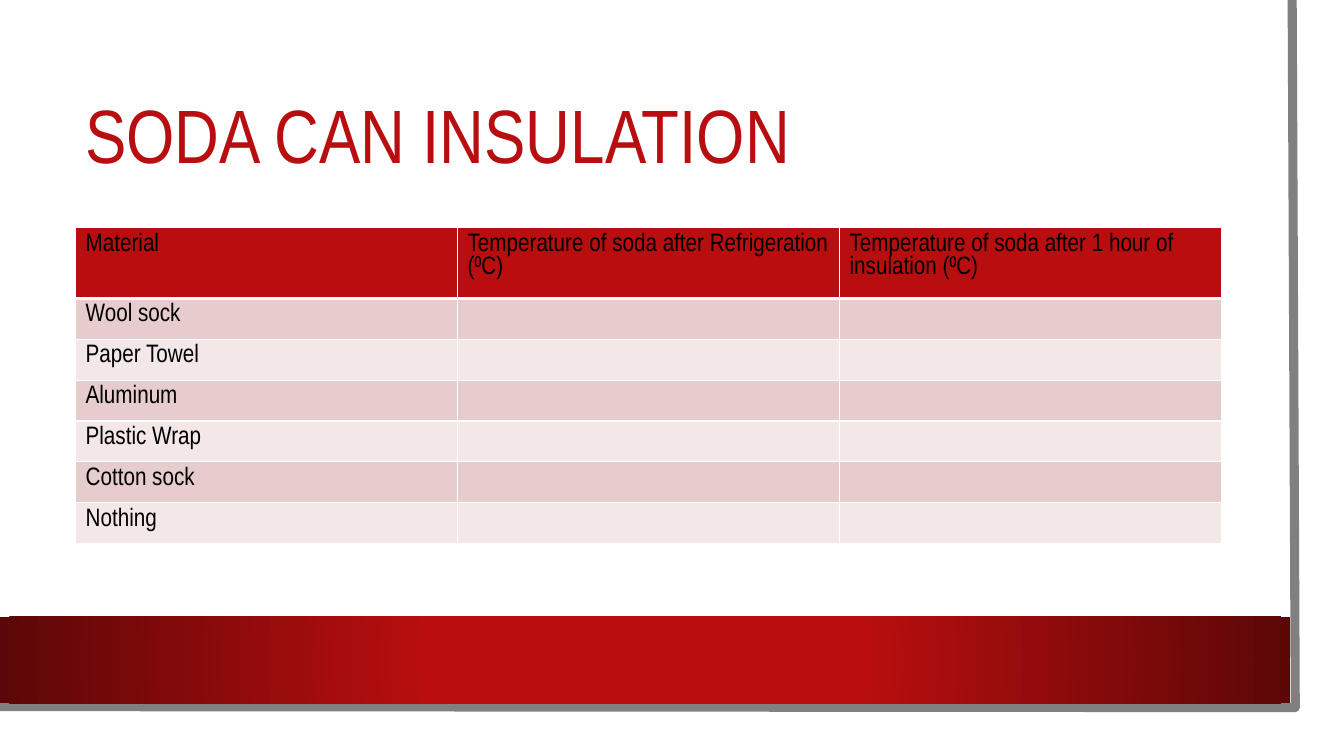
from lxml.etree import SubElement
from pptx import Presentation
from pptx.dml.color import RGBColor
from pptx.enum.shapes import MSO_SHAPE
from pptx.enum.text import MSO_ANCHOR
from pptx.oxml import parse_xml
from pptx.oxml.ns import nsdecls, qn
from pptx.util import Pt

FONT = "Arial Narrow"
COLORS = {
    "white": "FFFFFF",
    "black": "000000",
    "red": "B80E0F",
    "dark_red": "5C0707",
    "gray": "808080",
    "band_dark": "E6CCCC",
    "band_light": "F3E7E7",
}
HEADERS = [
    "Material",
    "Temperature of soda after Refrigeration (⁰C)",
    "Temperature of soda after 1 hour of insulation (⁰C)",
]
MATERIALS = ["Wool sock", "Paper Towel", "Aluminum", "Plastic Wrap", "Cotton sock", "Nothing"]


def rgb(name):
    return RGBColor.from_string(COLORS[name])


def add_run(p, text, size, color):
    r = p.add_run()
    r.text = text
    r.font.name = FONT
    r.font.size = Pt(size)
    r.font.color.rgb = rgb(color)


def add_rect(s, x, y, w, h, color):
    sp = s.shapes.add_shape(MSO_SHAPE.RECTANGLE, Pt(x), Pt(y), Pt(w), Pt(h))
    sp.shadow.inherit = False
    sp.fill.solid()
    sp.fill.fore_color.rgb = rgb(color)
    sp.line.fill.background()
    return sp


def add_page_edge(s, points):
    corners = [(Pt(x), Pt(y)) for x, y in points]
    builder = s.shapes.build_freeform(*corners[0])
    builder.add_line_segments(corners[1:], close=False)
    sp = builder.convert_to_shape()
    sp.shadow.inherit = False
    sp.fill.background()
    sp.line.color.rgb = rgb("gray")
    sp.line.width = Pt(6.5)


def set_radial_gradient(sp, inner, outer):
    solid = sp._element.spPr.find(qn("a:solidFill"))
    gradient = parse_xml(
        f'<a:gradFill {nsdecls("a")} rotWithShape="1"><a:gsLst>'
        f'<a:gs pos="34000"><a:srgbClr val="{COLORS[inner]}"/></a:gs>'
        f'<a:gs pos="100000"><a:srgbClr val="{COLORS[outer]}"/></a:gs></a:gsLst>'
        '<a:path path="circle"><a:fillToRect l="50000" t="50000" r="50000" b="50000"/></a:path>'
        "</a:gradFill>"
    )
    solid.getparent().replace(solid, gradient)


def add_title(s, text):
    tf = s.shapes.add_textbox(Pt(54), Pt(54), Pt(818.64), Pt(90.72)).text_frame
    tf.word_wrap = True
    tf.vertical_anchor = MSO_ANCHOR.MIDDLE
    p = tf.paragraphs[0]
    p.line_spacing = 0.9
    add_run(p, text, 54, "red")


def set_borders(cell, bottom):
    tcPr = cell._tc.get_or_add_tcPr()
    for side, width in (("L", 1), ("R", 1), ("T", 1), ("B", bottom)):
        ln = SubElement(tcPr, qn(f"a:ln{side}"), w=str(Pt(width)))
        fill = SubElement(ln, qn("a:solidFill"))
        SubElement(fill, qn("a:srgbClr"), val=COLORS["white"])


def style_cell(cell, text, fill, bottom):
    set_borders(cell, bottom)
    cell.fill.solid()
    cell.fill.fore_color.rgb = rgb(fill)
    p = cell.text_frame.paragraphs[0]
    if text:
        add_run(p, text, 18, "black")
    else:
        p.font.size = Pt(18)
        p.font.name = FONT


def add_data_table(s, rows):
    row_height = 29.2
    table = s.shapes.add_table(
        len(rows), len(HEADERS), Pt(54), Pt(162.72), Pt(818.64), Pt(row_height * len(rows))
    ).table
    for row in table.rows:
        row.height = Pt(row_height)
    for i, values in enumerate(rows):
        band = "band_dark" if i % 2 else "band_light"
        for j, text in enumerate(values):
            header = i == 0
            cell = table.cell(i, j)
            style_cell(cell, text, "red" if header else band, 3 if i == 0 else 1)
            if i == 1:
                top = cell._tc.tcPr.find(qn("a:lnT"))
                top.set("w", str(Pt(3)))


def main():
    prs = Presentation()
    prs.slide_width, prs.slide_height = Pt(960), Pt(540)
    s = prs.slides.add_slide(prs.slide_layouts[6])
    add_rect(s, 0, 0, 943.2, 523.44, "white")
    add_page_edge(s, [(923, 0), (925.2, 505.44), (-2.16, 504.72)])
    band = add_rect(s, 0, 440.64, 921.6, 61.92, "red")
    set_radial_gradient(band, "red", "dark_red")
    add_title(s, "SODA CAN INSULATION")
    add_data_table(s, [HEADERS] + [[name, "", ""] for name in MATERIALS])
    prs.save("out.pptx")


if __name__ == "__main__":
    main()
